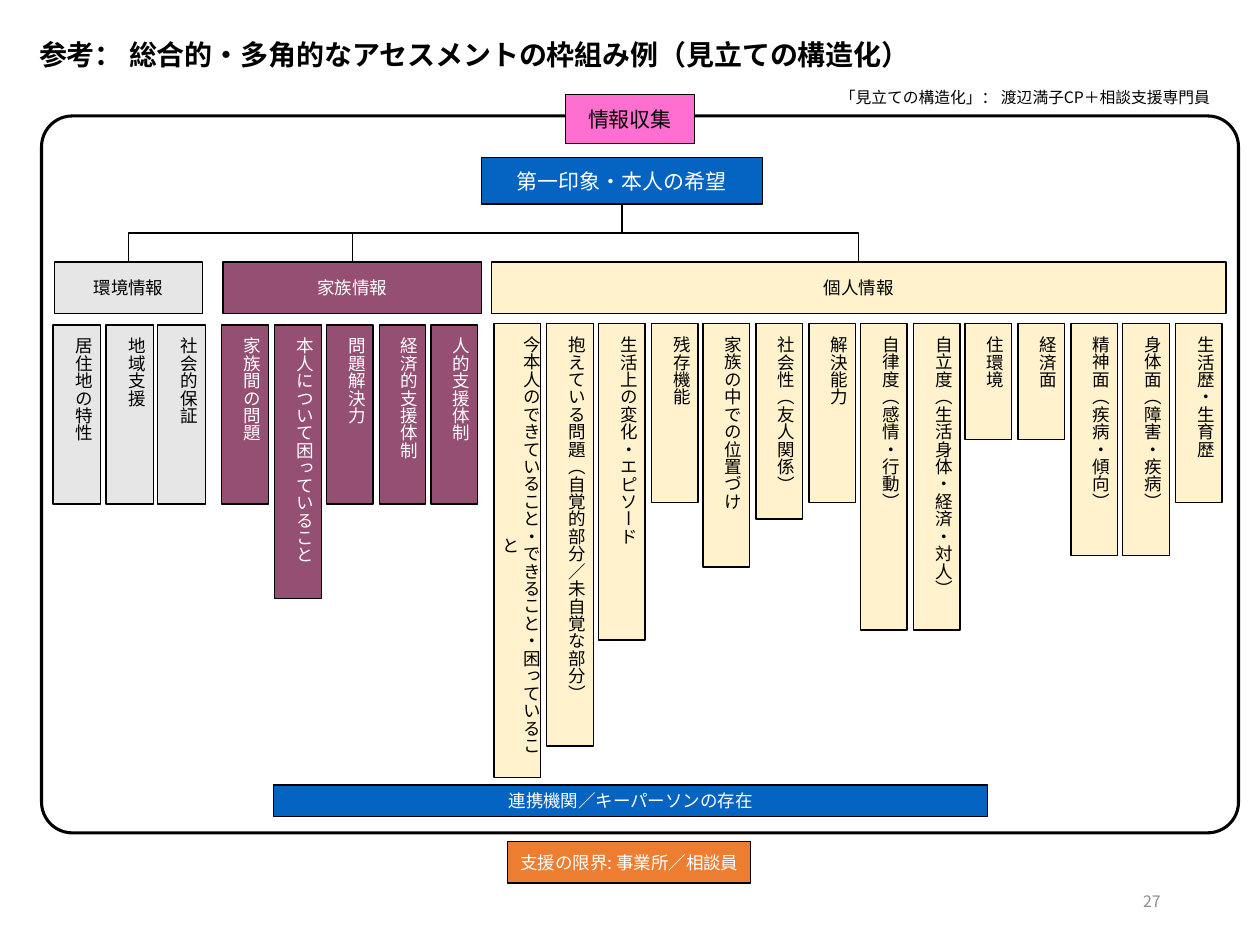
from dataclasses import dataclass

from lxml import etree
from pptx import Presentation
from pptx.dml.color import RGBColor
from pptx.enum import shapes, text
from pptx.oxml import ns
from pptx.util import Emu, Pt

PX = 9144
FONT = "Noto Sans CJK JP"
BLACK, WHITE, GRAY = "000000", "FFFFFF", "8C8C8C"
CREAM, PLUM, SILVER = "FFF2CC", "954F72", "E6E6E6"
BLUE, PINK, ORANGE = "0563C1", "FF6FCF", "ED7D31"
PITCH = 41.6


@dataclass
class Box:
    label: str
    x: int
    y: int
    w: int
    h: int
    fill: str
    ink: str = BLACK
    size: int = 10
    tall: bool = False
    low: bool = False


@dataclass
class Group:
    head: Box
    x: int
    y: int
    w: int
    items: list[tuple[str, int]]


def px(num: float) -> Emu:
    return Emu(round(num * PX))


def hue(code: str) -> RGBColor:
    return RGBColor.from_string(code)


def write(frame, words: str, size: int, ink: str, align, bold: bool = False) -> None:
    frame.text = words
    para = frame.paragraphs[0]
    para.alignment = align
    for run in para.runs:
        run.font.size = Pt(size)
        run.font.bold = bold
        run.font.color.rgb = hue(ink)
        run.font.name = FONT
        etree.SubElement(run._r.get_or_add_rPr(), ns.qn("a:ea"), typeface=FONT)


def place(shape, x: int, y: int, w: int, h: int) -> None:
    shape.left, shape.top, shape.width, shape.height = map(px, (x, y, w, h))


def draw(slide, box: Box):
    shape = slide.shapes.add_shape(
        shapes.MSO_SHAPE.RECTANGLE, px(box.x), px(box.y), px(box.w), px(box.h))
    shape.shadow.inherit = False
    shape.fill.solid()
    shape.fill.fore_color.rgb = hue(box.fill)
    shape.line.color.rgb = hue(BLACK)
    shape.line.width = Pt(0.75)
    frame = shape.text_frame
    frame.word_wrap = box.tall
    frame.vertical_anchor = text.MSO_ANCHOR.MIDDLE
    if box.tall:
        frame._txBody.bodyPr.set("vert", "eaVert")
        frame.vertical_anchor = text.MSO_ANCHOR.BOTTOM if box.low else text.MSO_ANCHOR.TOP
    write(frame, box.label, box.size, box.ink, text.PP_ALIGN.CENTER)
    return shape


def note(slide, words: str, x: int, y: int, w: int, h: int, ink: str, anchor) -> None:
    frame = slide.shapes.add_textbox(px(x), px(y), px(w), px(h)).text_frame
    frame.word_wrap = True
    frame.vertical_anchor = anchor
    write(frame, words, 9, ink, text.PP_ALIGN.RIGHT)


def branch(slide, top, head) -> None:
    x1, y1 = top.left + top.width // 2, top.top + top.height
    x2, y2 = head.left + head.width // 2, head.top
    link = slide.shapes.add_connector(shapes.MSO_CONNECTOR.ELBOW, x1, y1, x2, y2)
    link.begin_connect(top, 2)
    link.end_connect(head, 0)
    link.line.color.rgb = hue(BLACK)
    link.line.width = Pt(0.75)
    props = link._element.spPr
    etree.SubElement(props, ns.qn("a:effectLst"))
    form = props.find(ns.qn("a:xfrm"))
    form.attrib.clear()
    form.set("rot", "5400000" if x2 < x1 else "16200000")
    if x2 > x1:
        form.set("flipH", "1")
    link.width, link.height = Emu(y2 - y1), Emu(abs(x2 - x1))
    link.left = Emu((x1 + x2 - link.width) // 2)
    link.top = Emu((y1 + y2 - link.height) // 2)


GROUPS = [
    Group(Box("環境情報", 43, 208, 118, 41, SILVER), 42, 258, 38, [
        ("居住地の特性", 142), ("地域支援", 142), ("社会的保証", 142)]),
    Group(Box("家族情報", 177, 208, 205, 41, PLUM, WHITE), 176, 258, 37, [
        ("家族間の問題", 142), ("本人について困っていること", 217),
        ("問題解決力", 142), ("経済的支援体制", 142), ("人的支援体制", 142)]),
    Group(Box("個人情報", 390, 208, 583, 41, CREAM), 392, 257, 37, [
        ("今本人のできていること・できること・困っていること", 360),
        ("抱えている問題（自覚的部分／未自覚な部分）", 335),
        ("生活上の変化・エピソード", 251), ("残存機能", 142),
        ("家族の中での位置づけ", 193), ("社会性（友人関係）", 155),
        ("解決能力", 142), ("自律度（感情・行動）", 243),
        ("自立度（生活身体・経済・対人）", 243), ("住環境", 92), ("経済面", 92),
        ("精神面（疾病・傾向）", 184), ("身体面（障害・疾病）", 184),
        ("生活歴・生育歴", 142)]),
]


def main() -> None:
    deck = Presentation()
    deck.slide_width, deck.slide_height = px(1000), px(750)
    slide = deck.slides.add_slide(deck.slide_layouts[0])
    sub = slide.placeholders[1]._element
    sub.getparent().remove(sub)

    title = slide.shapes.title
    place(title, 21, 20, 917, 50)
    title.text_frame.vertical_anchor = text.MSO_ANCHOR.MIDDLE
    write(title.text_frame, "参考： 総合的・多角的なアセスメントの枠組み例（見立ての構造化）",
          16, BLACK, text.PP_ALIGN.LEFT, True)
    title.text_frame.paragraphs[0].line_spacing = 0.9

    frame = slide.shapes.add_shape(
        shapes.MSO_SHAPE.ROUNDED_RECTANGLE, px(33), px(92), px(950), px(569))
    frame.adjustments[0] = 0.043
    frame.shadow.inherit = False
    frame.fill.background()
    frame.line.color.rgb = hue(BLACK)
    frame.line.width = Pt(1.75)

    top = draw(slide, Box("第一印象・本人の希望", 382, 125, 223, 37, BLUE, WHITE, 12))
    for group in GROUPS:
        head = draw(slide, group.head)
        branch(slide, top, head)
        for i, (label, tall) in enumerate(group.items):
            draw(slide, Box(label, round(group.x + i * PITCH), group.y, group.w, tall,
                            group.head.fill, group.head.ink, tall=True, low=tall == 360))

    draw(slide, Box("情報収集", 449, 75, 102, 39, PINK, size=12))
    draw(slide, Box("支援の限界: 事業所／相談員", 403, 668, 193, 33, ORANGE, WHITE))
    draw(slide, Box("連携機関／キーパーソンの存在", 217, 623, 567, 25, BLUE, WHITE))
    note(slide, "「見立ての構造化」： 渡辺満子CP＋相談支援専門員",
         471, 65, 499, 25, BLACK, text.MSO_ANCHOR.TOP)
    note(slide, "27", 706, 695, 225, 40, GRAY, text.MSO_ANCHOR.MIDDLE)
    deck.save("out.pptx")


if __name__ == "__main__":
    main()
